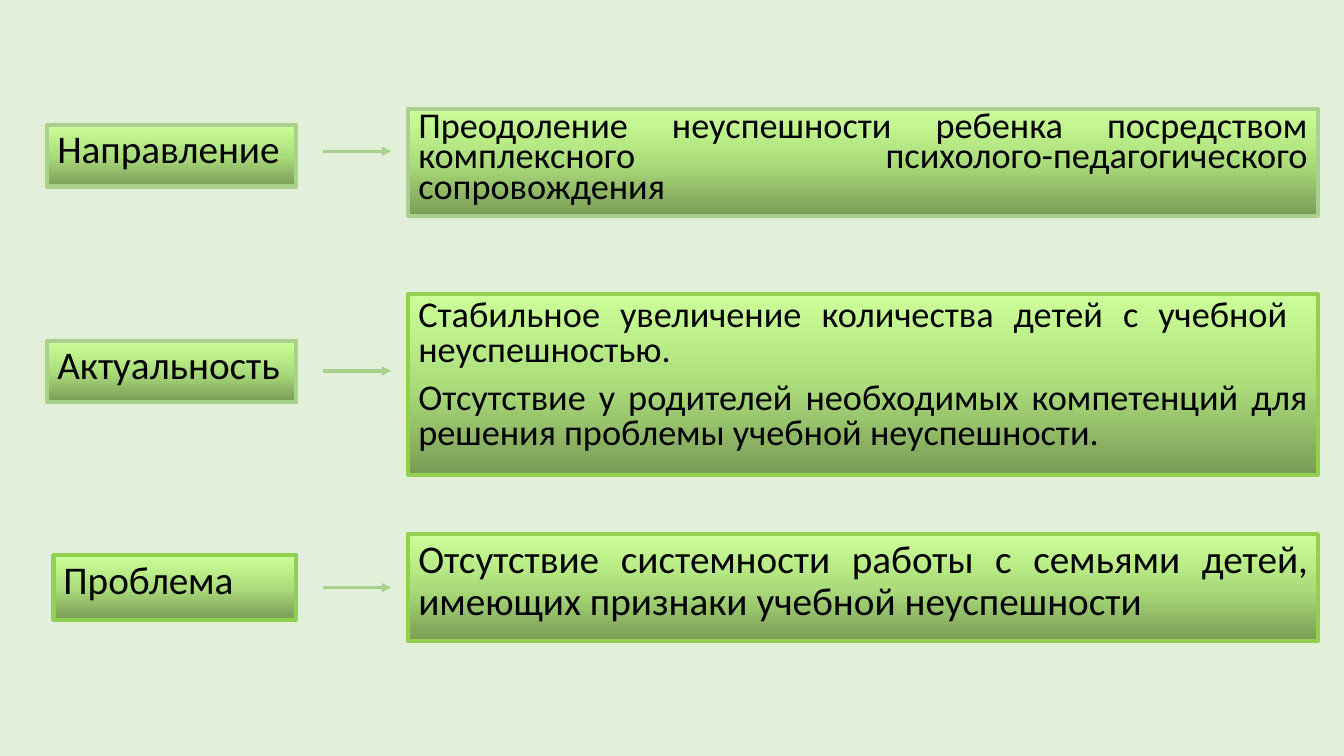
from copy import deepcopy

from pptx import Presentation
from pptx.dml.color import RGBColor
from pptx.enum.shapes import MSO_CONNECTOR, MSO_SHAPE
from pptx.enum.text import MSO_ANCHOR, PP_ALIGN
from pptx.oxml.ns import qn
from pptx.util import Inches, Pt
from lxml.etree import SubElement

COLORS = {
    "background": "E2F0D9",
    "soft": "A9D18E",
    "bright": "92D050",
    "text": "000000",
}
GRADIENT = [(0, "799C56"), (0.5, "ACDD7B"), (1, "CCFF99")]
LABEL_RIGHT = 2.94
ARROW_LEFT, ARROW_RIGHT = 3.2, 3.88
DETAIL_LEFT, DETAIL_WIDTH = 4.05, 9.02

LABELS = [
    ("Направление", 0.47, 1.24, 0.61, "soft"),
    ("Актуальность", 0.47, 3.38, 0.61, "soft"),
    ("Проблема", 0.53, 5.51, 0.64, "bright"),
]
DETAILS = [
    (["Преодоление неуспешности ребенка посредством комплексного "
      "психолого-педагогического сопровождения"], 1.08, 1.06, "soft", 25.9, 0.7),
    (["Стабильное увеличение количества детей с учебной  неуспешностью.",
      "Отсутствие у родителей необходимых компетенций для решения "
      "проблемы учебной неуспешности."], 2.92, 1.79, "bright", 25.9, 0.8),
    (["Отсутствие системности работы с семьями детей, имеющих признаки "
      "учебной неуспешности"], 5.3, 1.06, "bright", 28, 0.9),
]
ARROW_HEIGHTS = [1.5, 3.68, 5.83]


def color(name):
    """Return the named palette colour."""
    return RGBColor.from_string(COLORS[name])


def fill_gradient(box):
    """Fill a box with the vertical green gradient."""
    box.fill.gradient()
    box.fill.gradient_angle = 90
    stop_list = box.fill._fill._gradFill.find(qn("a:gsLst"))
    stop_list.append(deepcopy(stop_list[0]))
    for stop, (position, shade) in zip(box.fill.gradient_stops, GRADIENT):
        stop.position = position
        stop.color.rgb = RGBColor.from_string(shade)


def add_box(page, texts, left, top, width, height, border, size=28, spacing=0.9,
            align=PP_ALIGN.LEFT):
    """Add a bordered gradient box holding the given paragraphs."""
    box = page.shapes.add_shape(MSO_SHAPE.RECTANGLE, Inches(left), Inches(top),
                                Inches(width), Inches(height))
    box.shadow.inherit = False
    fill_gradient(box)
    box.line.color.rgb = color(border)
    box.line.width = Pt(3)
    frame = box.text_frame
    frame.word_wrap = True
    frame.vertical_anchor = MSO_ANCHOR.TOP
    for index, text in enumerate(texts):
        para = frame.add_paragraph() if index else frame.paragraphs[0]
        para.text = text
        para.alignment = align
        para.line_spacing = spacing
        para.space_before = Pt(10)
        para.font.name = "Calibri"
        para.font.size = Pt(size)
        para.font.color.rgb = color("text")


def add_arrow(page, height):
    """Add an arrow from a label to its detail box."""
    arrow = page.shapes.add_connector(MSO_CONNECTOR.STRAIGHT, Inches(ARROW_LEFT),
                                      Inches(height), Inches(ARROW_RIGHT), Inches(height))
    arrow.line.color.rgb = color("soft")
    arrow.line.width = Pt(2.25)
    SubElement(arrow.line._get_or_add_ln(), qn("a:tailEnd"), type="triangle")
    SubElement(arrow._element.spPr, qn("a:effectLst"))


def main():
    """Build the slide and save it."""
    deck = Presentation()
    deck.slide_width, deck.slide_height = Inches(13.33), Inches(7.5)
    page = deck.slides.add_slide(deck.slide_layouts[6])
    page.background.fill.solid()
    page.background.fill.fore_color.rgb = color("background")
    for text, left, top, height, border in LABELS:
        add_box(page, [text], left, top, LABEL_RIGHT - left, height, border)
    for texts, top, height, border, size, spacing in DETAILS:
        add_box(page, texts, DETAIL_LEFT, top, DETAIL_WIDTH, height, border,
                size, spacing, PP_ALIGN.JUSTIFY)
    for height in ARROW_HEIGHTS:
        add_arrow(page, height)
    deck.save("out.pptx")


if __name__ == "__main__":
    main()
